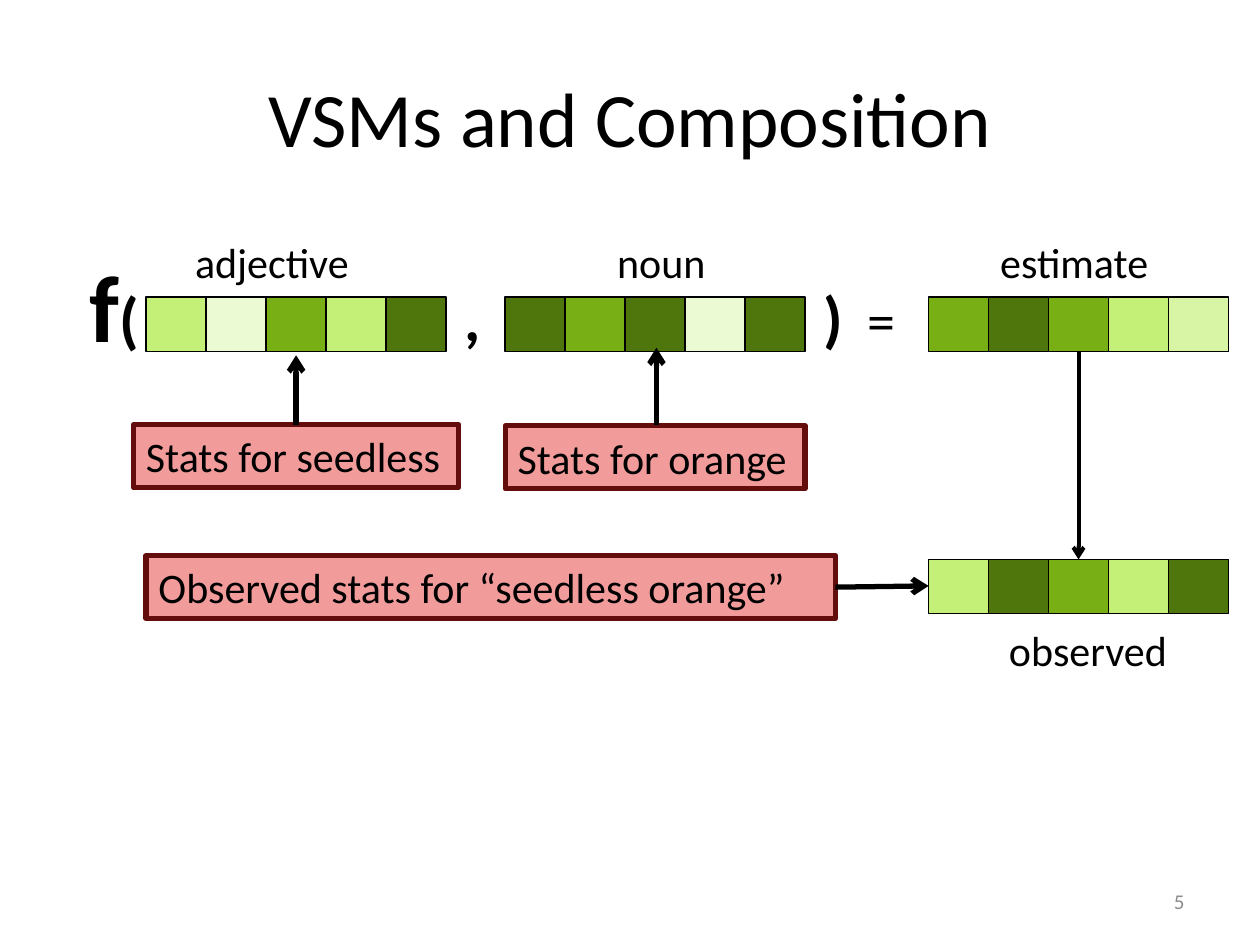
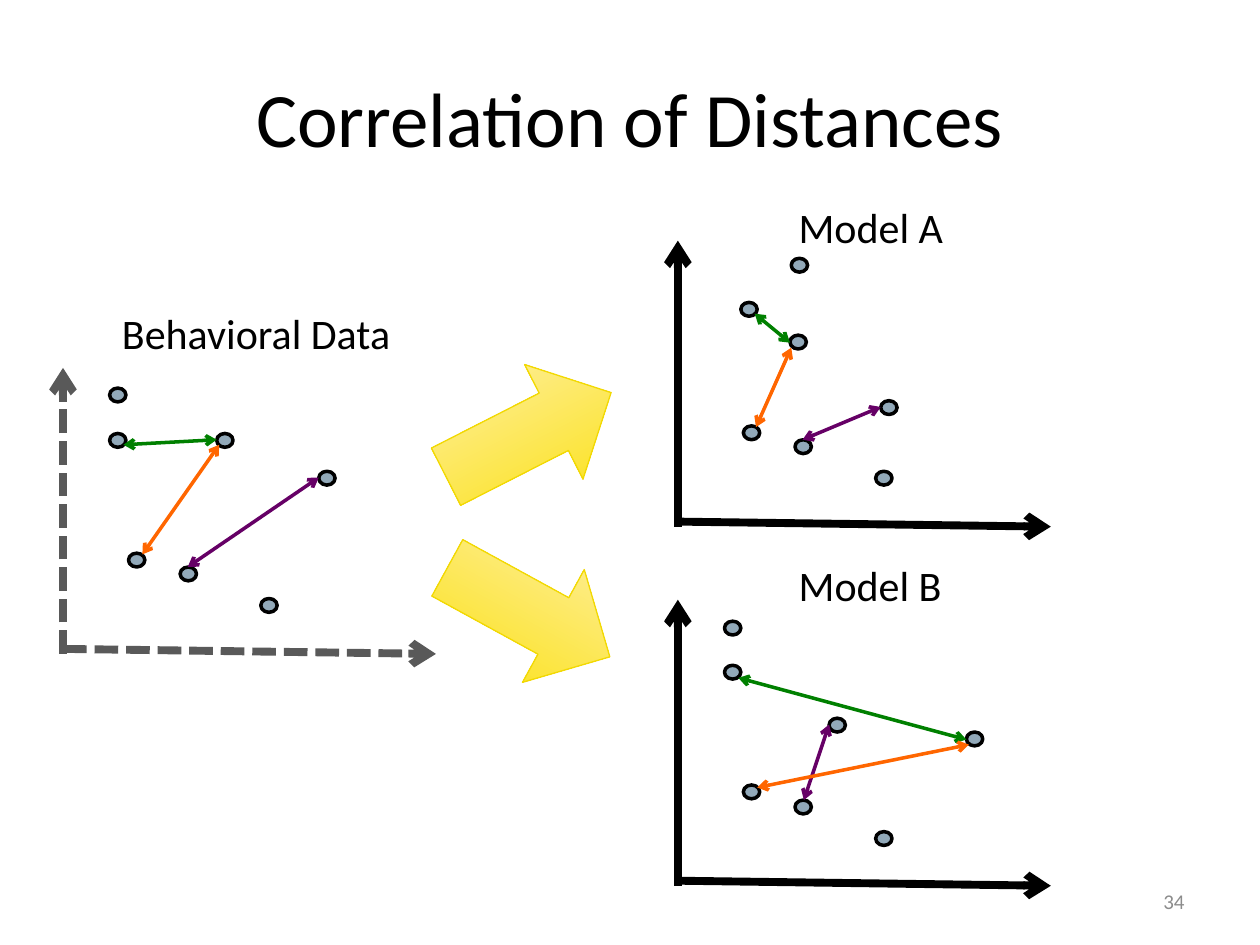
import pptx
import pptx.util
import pptx.dml.color
import pptx.enum.dml
import pptx.enum.shapes
import pptx.enum.text
import pptx.oxml.xmlchemy

Inches, Pt = pptx.util.Inches, pptx.util.Pt
SHAPE = pptx.enum.shapes.MSO_SHAPE
ALIGN = pptx.enum.text.PP_ALIGN
ANCHOR = pptx.enum.text.MSO_ANCHOR
DASH = pptx.enum.dml.MSO_LINE.SQUARE_DOT
node = pptx.oxml.xmlchemy.OxmlElement

FONT = "Calibri"
BLACK, GRAY, PALE = "000000", "595959", "8C8C8C"
PINK, MAROON = "F19B9B", "630D0D"
DOT, GREEN, PURPLE, ORANGE = "92A9B9", "008000", "660066", "FF6600"
GOLD, CREAM, RIM = "FADF00", "FFF1B6", "F2D902"
# Vector cell shades, from lightest to darkest
SHADES = ["EBFAD2", "D8F5A5", "C4F078", "77AF14", "4F750D"]
color = pptx.dml.color.RGBColor.from_string


def write(slide, text, box, size=24, ink=BLACK, bold=False, align=ALIGN.LEFT,
          anchor=ANCHOR.TOP, wrap=False, fill=None, edge=None):
    """Add a text box; text is a string or a list of (string, size) runs."""
    shape = slide.shapes.add_textbox(*map(Inches, box))
    if fill:
        shape.fill.solid()
        shape.fill.fore_color.rgb = color(fill)
        shape.line.color.rgb = color(edge)
        shape.line.width = Pt(3)
    frame = shape.text_frame
    frame.word_wrap = wrap
    frame.vertical_anchor = anchor
    para = frame.paragraphs[0]
    para.alignment = align
    for part, points in [(text, size)] if isinstance(text, str) else text:
        run = para.add_run()
        run.text = part
        run.font.name = FONT
        run.font.size = Pt(points)
        run.font.bold = bold
        run.font.color.rgb = color(ink)


def draw(slide, kind, box, edge, width, fill=None):
    """Add a preset shape, or an arrow from one point to another if kind is "one" or "both"."""
    if kind in ("one", "both"):
        item = slide.shapes.add_connector(
            pptx.enum.shapes.MSO_CONNECTOR.STRAIGHT, *map(Inches, box))
        item.line.color.rgb = color(edge)
        props = item._element.spPr
        for end in ["headEnd", "tailEnd"] if kind == "both" else ["tailEnd"]:
            tip = node("a:" + end)
            tip.set("type", "arrow")
            props.ln.append(tip)
        props.append(node("a:effectLst"))
    else:
        item = slide.shapes.add_shape(kind, *map(Inches, box))
        item.shadow.inherit = False
        item.line.color.rgb = color(edge)
        if fill:
            item.fill.solid()
            item.fill.fore_color.rgb = color(fill)
    item.line.width = Pt(width)
    return item


deck = pptx.Presentation()
deck.slide_width, deck.slide_height = Inches(10), Inches(7.5)
pages = []
for title, number in [("VSMs and Composition", "5"), ("Correlation of Distances", "34")]:
    page = deck.slides.add_slide(deck.slide_layouts[6])
    write(page, title, (0.5, 0.3, 9, 1.25), size=44, align=ALIGN.CENTER,
          anchor=ANCHOR.MIDDLE, wrap=True)
    write(page, number, (7.17, 6.95, 2.33, 0.4), size=12, ink=PALE,
          align=ALIGN.RIGHT, anchor=ANCHOR.MIDDLE, wrap=True)
    pages.append(page)
vectors, plots = pages

# Slide 1: vectors as rows of five shaded cells
CELL = 2.38 / 5
for left, top, shades in [(1.16, 2.36, (2, 0, 3, 2, 4)), (4.01, 2.36, (4, 3, 4, 0, 4)),
                          (7.37, 2.36, (3, 4, 3, 2, 1)), (7.37, 4.44, (2, 4, 3, 2, 4))]:
    for col, shade in enumerate(shades):
        draw(vectors, SHAPE.RECTANGLE, (left + col * CELL, top, CELL, 0.43),
             BLACK, 1, SHADES[shade])

write(vectors, [("f", 54), ("(", 36)], (0.61, 1.92, 0.6, 1.01), bold=True)
for mark, left in [(",", 3.59), (")", 6.44)]:
    write(vectors, mark, (left, 2.16, 0.35, 0.71), size=36, bold=True)
write(vectors, "=", (6.76, 2.22, 0.47, 0.64), size=32, align=ALIGN.CENTER, wrap=True)

for label, left, top, width in [("adjective", 1.45, 1.83, 1.44), ("noun", 4.8, 1.83, 0.91),
                                ("estimate", 7.84, 1.83, 1.4), ("observed", 7.91, 4.91, 1.47)]:
    write(vectors, label, (left, top, width, 0.5))

for label, left, top, width, wrap in [
        ("Stats for seedless", 1.06, 3.37, 2.58, False),
        ("Stats for orange", 4.01, 3.38, 2.38, False),
        ("Observed stats for “seedless orange”", 1.16, 4.41, 5.47, True)]:
    write(vectors, label, (left, top, width, 0.5), wrap=wrap, fill=PINK, edge=MAROON)

for ends, width in [((8.56, 2.79, 8.56, 4.44), 2.25), ((2.35, 3.37, 2.35, 2.82), 3),
                    ((5.21, 3.37, 5.21, 2.76), 3), ((6.63, 4.66, 7.37, 4.65), 3)]:
    draw(vectors, "one", ends, BLACK, width)

# Slide 2: each plot has an origin, an axis style, dots and three links
PLOTS = [
    (0.5, 5.19, GRAY, DASH,
     [(0.87, 3.08), (2.07, 4.75), (1.02, 4.39), (1.43, 4.5),
      (2.53, 3.74), (1.72, 3.44), (0.87, 3.44)],
     [(0.98, 3.53, 1.72, 3.49), (2.53, 3.79, 1.49, 4.5), (1.74, 3.53, 1.13, 4.4)]),
    (5.38, 4.18, BLACK, None,
     [(6.28, 2.05), (6.95, 3.74), (5.9, 3.38), (6.31, 3.49),
      (6.99, 3.18), (6.27, 2.66), (5.88, 2.4)],
     [(5.99, 2.49, 6.27, 2.72), (6.99, 3.23, 6.37, 3.49), (6.28, 2.76, 6, 3.39)]),
    (5.38, 7.03, BLACK, None,
     [(5.75, 4.93), (6.95, 6.6), (5.9, 6.23), (6.31, 6.35),
      (6.58, 5.7), (7.67, 5.81), (5.75, 5.28)],
     [(5.86, 5.38, 7.67, 5.87), (6.58, 5.75, 6.38, 6.35), (7.69, 5.91, 6.01, 6.25)]),
]
for left, base, ink, dash, dots, links in PLOTS:
    for ends in [(left, base, left, base - 2.27), (left, base - 0.04, left + 2.96, base)]:
        axis = draw(plots, "one", ends, ink, 4.5)
        if dash:
            axis.line.dash_style = dash
    for x, y in dots:
        draw(plots, SHAPE.OVAL, (x, y, 0.13, 0.11), BLACK, 2, DOT)
    for ends, ink in zip(links, (GREEN, PURPLE, ORANGE)):
        draw(plots, "both", ends, ink, 2)

for top, turn in [(2.94, 333), (4.35, 28.7)]:
    arrow = draw(plots, SHAPE.RIGHT_ARROW, (3.46, top, 1.47, 1.02), RIM, 0.75)
    arrow.rotation = turn
    arrow.fill.gradient()
    arrow.fill.gradient_angle = 90
    for stop, shade in zip(arrow.fill.gradient_stops, (GOLD, CREAM)):
        stop.color.rgb = color(shade)

for label, left, top, width in [("Behavioral Data", 0.87, 2.39, 2.37),
                                ("Model A", 6.24, 1.55, 1.37), ("Model B", 6.24, 4.39, 1.35)]:
    write(plots, label, (left, top, width, 0.5))

deck.save("out.pptx")
